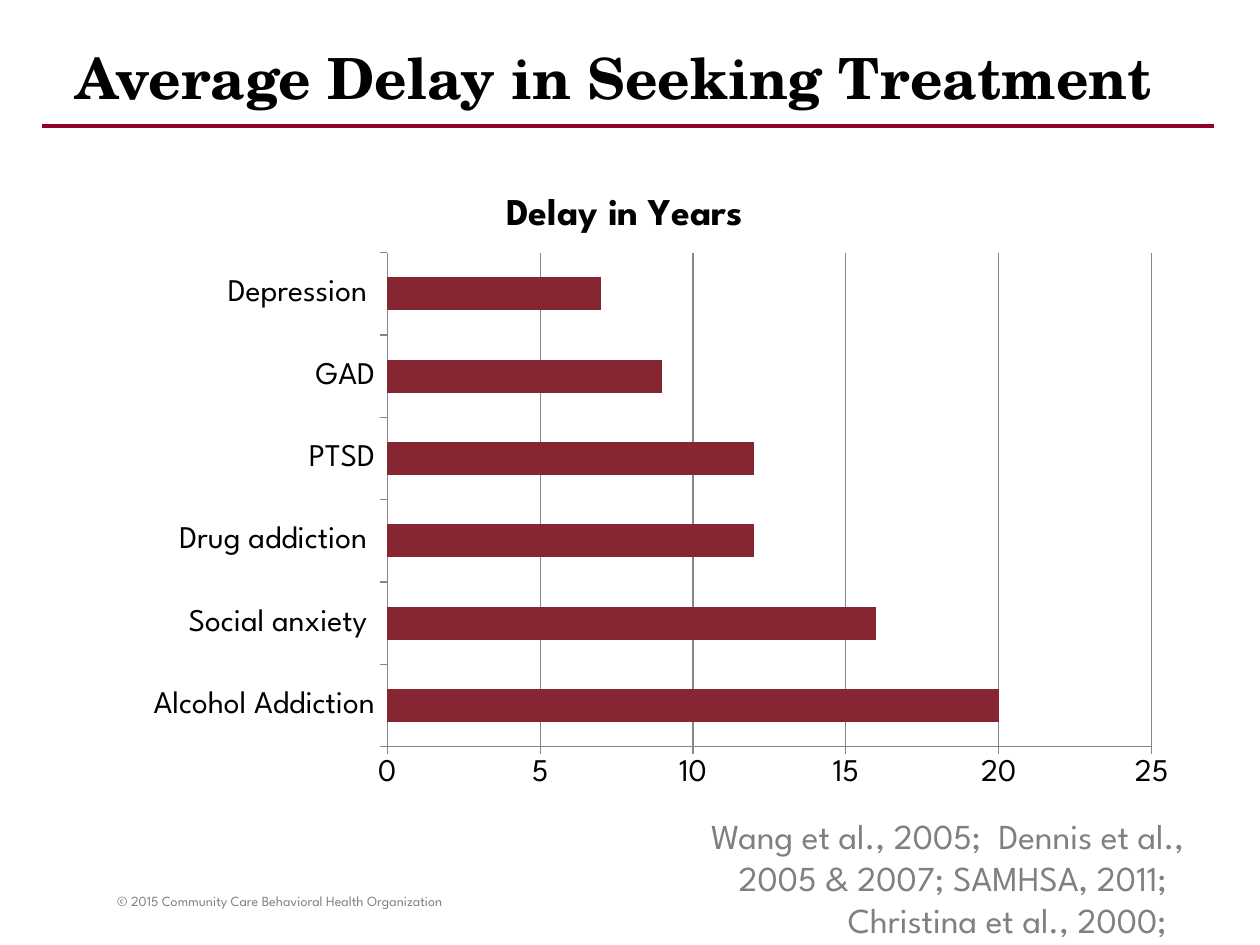
from lxml import etree
from pptx import Presentation
from pptx.chart.data import CategoryChartData
from pptx.dml.color import RGBColor
from pptx.enum.chart import XL_CHART_TYPE as ChartType, XL_TICK_MARK as Tick
from pptx.enum.shapes import MSO_CONNECTOR as Connector
from pptx.enum.text import MSO_ANCHOR as Anchor, PP_ALIGN as Align
from pptx.oxml.ns import qn
from pptx.util import Pt

SANS = "League Spartan"


def color(value):
    return RGBColor.from_string(value)


def add_text(box, words, size, font, ink, align=Align.LEFT, bold=False):
    frame = slide.shapes.add_textbox(*map(Pt, box)).text_frame
    frame.word_wrap = True
    frame.vertical_anchor = Anchor.MIDDLE
    paragraph = frame.paragraphs[0]
    paragraph.alignment = align
    run = paragraph.add_run()
    run.text = words
    run.font.size = Pt(size)
    run.font.name = font
    run.font.bold = bold
    run.font.color.rgb = color(ink)


deck = Presentation()
deck.slide_width, deck.slide_height = Pt(720), Pt(540)
slide = deck.slides.add_slide(deck.slide_layouts[6])

rule = slide.shapes.add_connector(Connector.STRAIGHT, Pt(24), Pt(72), Pt(693.5), Pt(72))
rule.line.color.rgb = color("900028")
rule.line.width = Pt(2.25)
etree.SubElement(rule._element.spPr, qn("a:effectLst"))

add_text((36, 21.6, 648, 44.6), "Average Delay in Seeking Treatment",
         32.4, "TeX Gyre Schola", "000000", bold=True)

delays = CategoryChartData()
delays.categories = ["Alcohol Addiction", "Social anxiety ", "Drug addiction ",
                     "PTSD", "GAD", "Depression "]
delays.add_series("Series 1", [20, 16, 12, 12, 9, 7])
chart = slide.shapes.add_chart(ChartType.BAR_CLUSTERED, Pt(36), Pt(95.8),
                               Pt(648), Pt(386.6), delays).chart
chart.font.size = Pt(18)
chart.font.name = SANS
chart.font.color.rgb = color("000000")
chart.has_legend = False

heading = chart.chart_title.text_frame.paragraphs[0].add_run()
heading.text = "Delay in Years "
heading.font.size = Pt(21.6)
heading.font.bold = True
heading.font.name = SANS
heading.font.color.rgb = color("000000")

plot = chart.plots[0]
plot.gap_width = 150
plot.vary_by_categories = False
bars = plot.series[0].format.fill
bars.solid()
bars.fore_color.rgb = color("862633")

years = chart.value_axis
years.minimum_scale, years.maximum_scale, years.major_unit = 0, 25, 5
years.has_major_gridlines = True
for axis in (chart.category_axis, years):
    axis.major_tick_mark = Tick.OUTSIDE
    axis.minor_tick_mark = Tick.NONE
for stroke in (chart.category_axis.format.line, years.format.line,
               years.major_gridlines.format.line):
    stroke.color.rgb = color("868686")
    stroke.width = Pt(0.75)

plot_area = chart._chartSpace.chart.plotArea
for old in plot_area.findall(qn("c:layout")):
    plot_area.remove(old)
layout = etree.Element(qn("c:layout"))
plot_area.insert(0, layout)
manual = etree.SubElement(layout, qn("c:manualLayout"))
for tag, value in (("layoutTarget", "inner"), ("xMode", "edge"), ("yMode", "edge"),
                   ("x", "0.286"), ("y", "0.126"), ("w", "0.674"), ("h", "0.73")):
    etree.SubElement(manual, qn("c:" + tag)).set("val", value)

add_text((390.2, 473.8, 293.8, 55.4),
         "Wang et al., 2005;  Dennis et al., 2005 & 2007; SAMHSA, 2011;   "
         "Christina et al., 2000;  ", 20, SANS, "808080", Align.RIGHT)
add_text((59.8, 500.4, 246.2, 28.8),
         "© 2015 Community Care Behavioral Health Organization", 8, SANS, "808080")

deck.save("out.pptx")
